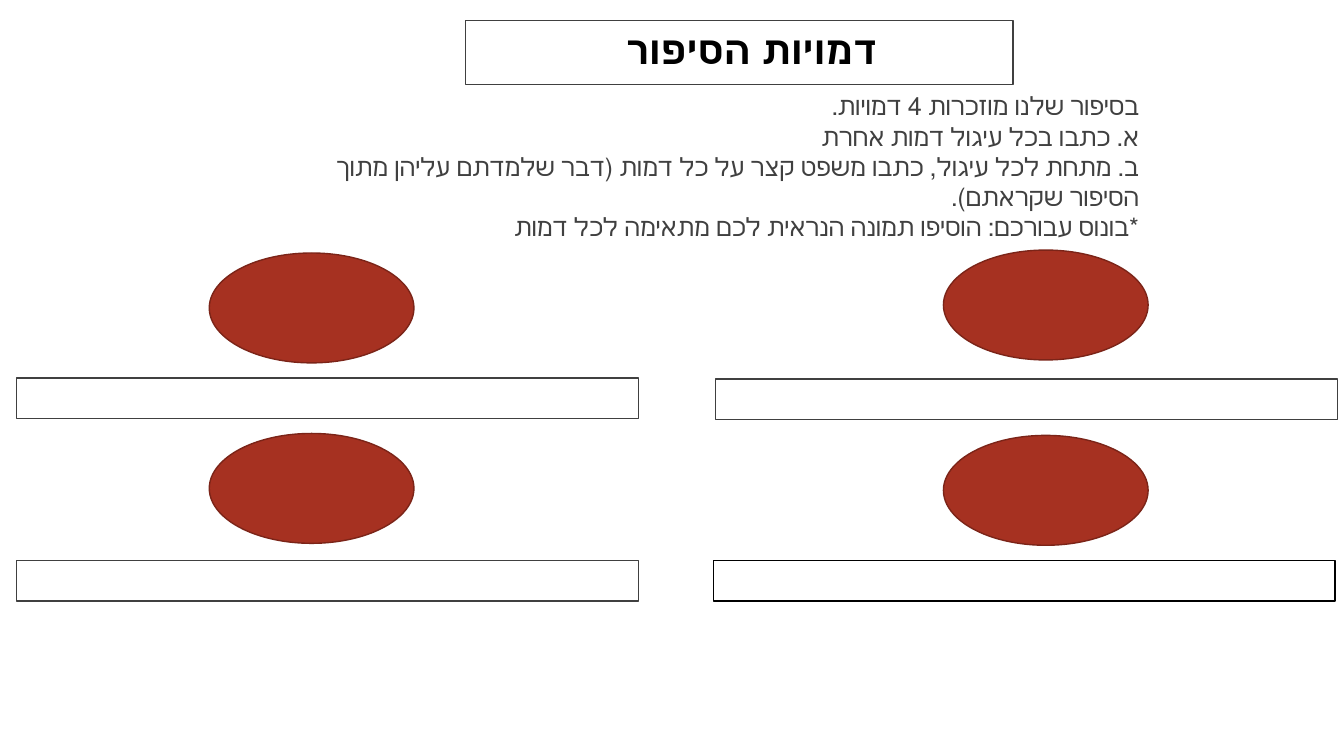
from dataclasses import dataclass

from pptx import Presentation
from pptx.dml.color import RGBColor
from pptx.enum.shapes import MSO_SHAPE
from pptx.enum.text import MSO_ANCHOR, MSO_AUTO_SIZE, PP_ALIGN
from pptx.util import Pt


@dataclass(frozen=True)
class Theme:
    font: str = "Karla"
    title_size: int = 28
    body_size: int = 18
    black: RGBColor = RGBColor(0x00, 0x00, 0x00)
    gray: RGBColor = RGBColor(0x40, 0x40, 0x40)
    red: RGBColor = RGBColor(0xA6, 0x31, 0x21)
    dark_red: RGBColor = RGBColor(0x7B, 0x24, 0x18)


THEME = Theme()

TITLE = "דמויות הסיפור"
INSTRUCTIONS = [
    "בסיפור שלנו מוזכרות 4 דמויות.",
    "א. כתבו בכל עיגול דמות אחרת",
    "ב. מתחת לכל עיגול, כתבו משפט קצר על כל דמות (דבר שלמדתם עליהן מתוך הסיפור שקראתם).",
    "*בונוס עבורכם: הוסיפו תמונה הנראית לכם מתאימה לכל דמות",
]

# Each character: left and top of the answer box, oval offset from it, outline
CHARACTERS = [
    (511.2, 270.7, 162.7, -92.1, THEME.gray),
    (12, 270, 137.5, -89.3, THEME.gray),
    (509.5, 400.6, 164.4, -89.6, THEME.black),
    (12, 400.6, 137.5, -91, THEME.gray),
]
ANSWER_SIZE = (444.2, 28.8)
OVAL_SIZE = (146.2, 78.5)


def add_outline(s, kind, x, y, w, h, line, fill=None):
    sp = s.shapes.add_shape(kind, Pt(x), Pt(y), Pt(w), Pt(h))
    sp.shadow.inherit = False
    if fill is None:
        sp.fill.background()
    else:
        sp.fill.solid()
        sp.fill.fore_color.rgb = fill
    sp.line.color.rgb = line
    sp.line.width = Pt(1)


def write_hebrew(sp, text, size, color, bold=False):
    tf = sp.text_frame
    tf.text = text
    tf.word_wrap = True
    tf.auto_size = MSO_AUTO_SIZE.SHAPE_TO_FIT_TEXT
    tf.vertical_anchor = MSO_ANCHOR.TOP
    for p in tf.paragraphs:
        p.alignment = PP_ALIGN.RIGHT
        p._p.get_or_add_pPr().set("rtl", "1")
        for r in p.runs:
            r.font.size = Pt(size)
            r.font.bold = bold
            r.font.color.rgb = color
            r.font.name = THEME.font


def add_heading(s, x, y, w, h):
    # The title sits to the left inside its frame
    sp = s.shapes.title
    sp.left, sp.top, sp.width, sp.height = Pt(x - 28.1), Pt(y), Pt(329.8), Pt(41)
    write_hebrew(sp, TITLE, THEME.title_size, THEME.black, bold=True)
    add_outline(s, MSO_SHAPE.RECTANGLE, x, y, w, h, THEME.gray)


def add_instructions(s, x, y, w, h):
    sp = s.shapes.add_textbox(Pt(x), Pt(y), Pt(w), Pt(h))
    write_hebrew(sp, "\n".join(INSTRUCTIONS), THEME.body_size, THEME.gray)


def add_character(s, x, y, oval_dx, oval_dy, line):
    add_outline(s, MSO_SHAPE.OVAL, x + oval_dx, y + oval_dy, *OVAL_SIZE,
                THEME.dark_red, THEME.red)
    add_outline(s, MSO_SHAPE.RECTANGLE, x, y, *ANSWER_SIZE, line)


def main():
    prs = Presentation()
    prs.slide_width, prs.slide_height = Pt(960), Pt(540)
    s = prs.slides.add_slide(prs.slide_layouts[5])

    # Heading and task
    add_heading(s, 332.6, 14.8, 391, 45.4)
    add_instructions(s, 213.8, 61.2, 607, 116.6)

    # Four story characters
    for character in CHARACTERS:
        add_character(s, *character)

    prs.save("out.pptx")


if __name__ == "__main__":
    main()
